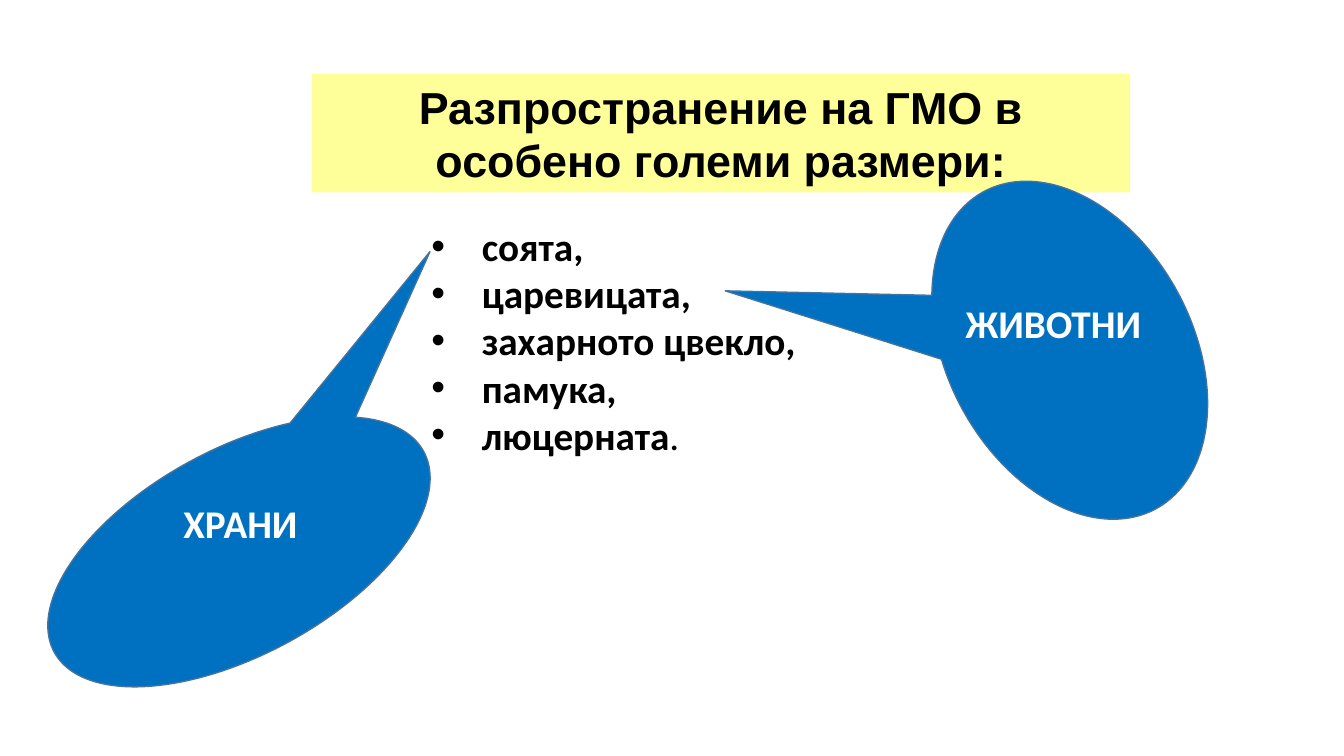
from pptx import Presentation
from pptx.dml.color import RGBColor
from pptx.enum.shapes import MSO_SHAPE
from pptx.enum.text import PP_ALIGN
from pptx.oxml import parse_xml
from pptx.oxml.ns import nsdecls
from pptx.util import Emu, Pt

PX = 9144  # 100 px to the inch
SLIDE_SIZE = (1333, 750)

TITLE_FORMAT = {"name": "Arial", "size": Pt(32), "bold": True}
BODY_FORMAT = {"name": "Calibri", "size": Pt(28), "bold": True}

CROPS = ["соята,", "царевицата,", "захарното цвекло,", "памука,", "люцерната"]


def px(length):
    return Emu(length * PX)


def rgb(hex_value):
    return RGBColor.from_string(hex_value)


def add_run(paragraph, text, values, color):
    run = paragraph.add_run()
    run.text = text
    for key, value in values.items():
        setattr(run.font, key, value)
    run.font.color.rgb = rgb(color)


def add_filled(slide, preset, box, fill):
    area = slide.shapes.add_shape(preset, *map(px, box))
    area.shadow.inherit = False
    area.fill.solid()
    area.fill.fore_color.rgb = rgb(fill)
    return area


def add_text_frame(slide, box):
    frame = slide.shapes.add_textbox(*map(px, box)).text_frame
    frame.word_wrap = True
    return frame


def add_title(slide, box, text):
    banner = add_filled(slide, MSO_SHAPE.RECTANGLE, box, "FFFF99")
    banner.line.fill.background()
    banner.text_frame.word_wrap = True
    heading = banner.text_frame.paragraphs[0]
    heading.alignment = PP_ALIGN.CENTER
    add_run(heading, text, TITLE_FORMAT, "000000")


def add_crop_list(slide, box, crops):
    frame = add_text_frame(slide, box)
    for index, crop in enumerate(crops):
        item = frame.paragraphs[0] if index == 0 else frame.add_paragraph()
        add_run(item, crop, BODY_FORMAT, "000000")
        # Hanging bullet
        properties = item._p.get_or_add_pPr()
        properties.set("marL", str(px(50)))
        properties.set("indent", str(px(-50)))
        for bullet in ('<a:buFont {} typeface="Arial"/>', '<a:buChar {} char="•"/>'):
            properties.append(parse_xml(bullet.format(nsdecls("a"))))
    # The closing full stop is not bold
    add_run(item, ".", {**BODY_FORMAT, "bold": False}, "000000")


def add_callout(slide, box, tip, label_offset, label_size, text):
    """Tilted balloon; the label is placed from the balloon's unrotated corner."""
    balloon = add_filled(slide, MSO_SHAPE.OVAL_CALLOUT, box, "0070C0")
    balloon.rotation = 61.5
    balloon.line.color.rgb = rgb("43739E")
    balloon.line.width = Pt(1)
    for index, position in enumerate(tip):
        balloon.adjustments[index] = position
    # Upright label
    left, top = box[0] + label_offset[0], box[1] + label_offset[1]
    frame = add_text_frame(slide, (left, top, *label_size))
    add_run(frame.paragraphs[0], text, BODY_FORMAT, "FFFFFF")


def main():
    presentation = Presentation()
    presentation.slide_width, presentation.slide_height = map(px, SLIDE_SIZE)
    slide = presentation.slides.add_slide(presentation.slide_layouts[6])

    add_title(slide, (309, 73, 812, 118),
              "Разпространение на ГМО в особено големи размери:")
    add_crop_list(slide, (418, 216, 592, 246), CROPS)
    add_callout(slide, (882, 226, 358, 243), (-0.6, 1.12),
                (66, 66), (199, 57), "ЖИВОТНИ")
    add_callout(slide, (135, 339, 204, 417), (-0.84, -0.74),
                (37, 151), (173, 57), "ХРАНИ")

    presentation.save("out.pptx")


if __name__ == "__main__":
    main()
